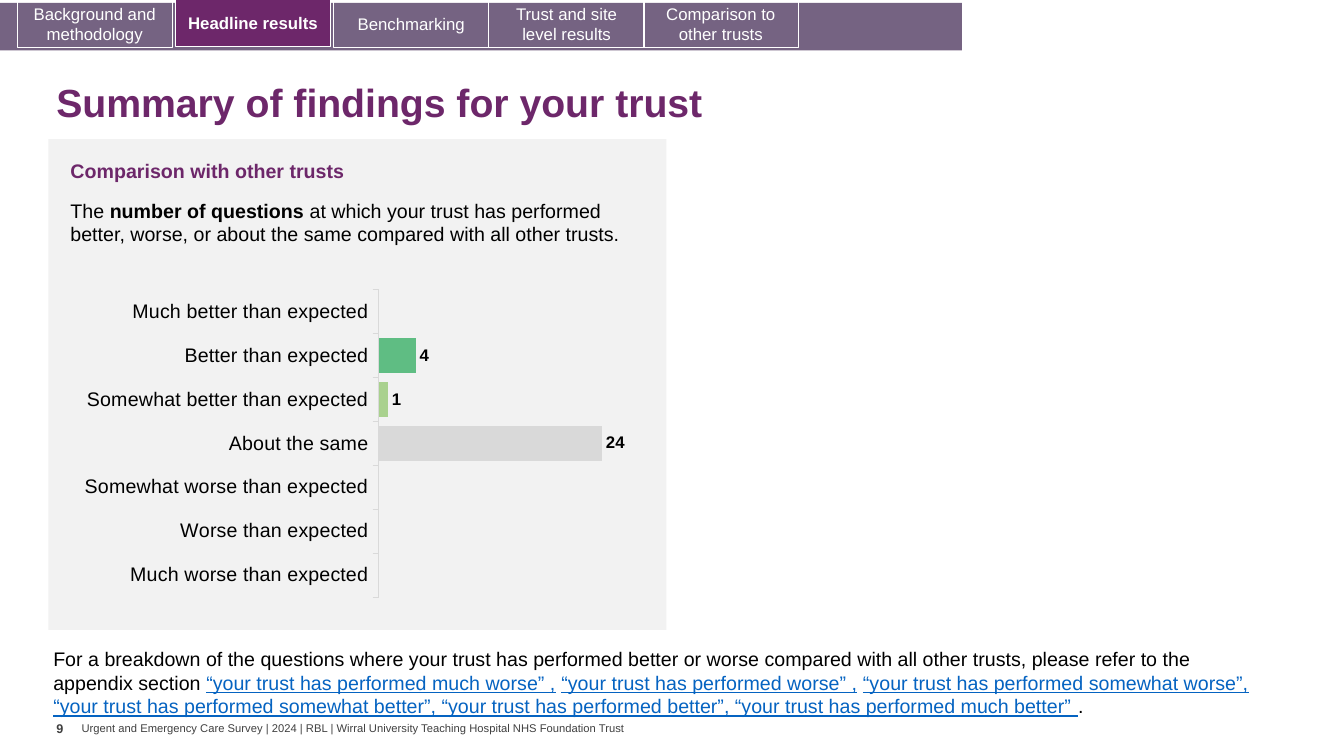
from lxml import etree
from pptx import Presentation
from pptx import util as u
from pptx.chart.data import CategoryChartData
from pptx.dml.color import RGBColor
from pptx.enum import chart as ch, shapes, text
from pptx.oxml.ns import qn

SLIDE_W, SLIDE_H = 13.33, 7.5
FONT = "Arial"
PURPLE = RGBColor(0x6D, 0x27, 0x6A)
NAV_PURPLE = RGBColor(0x75, 0x63, 0x82)
PANEL_GREY = RGBColor(0xF2, 0xF2, 0xF2)
AXIS_GREY = RGBColor(0xD9, 0xD9, 0xD9)
FOOTER_GREY = RGBColor(0x40, 0x40, 0x40)
LINK_BLUE = RGBColor(0x05, 0x63, 0xC1)
BLACK = RGBColor(0, 0, 0)
WHITE = RGBColor(0xFF, 0xFF, 0xFF)

TABS = [  # label, left edge
    ("Background and methodology", 0.17),
    ("Headline results", 1.74),
    ("Benchmarking", 3.31),
    ("Trust and site level results", 4.85),
    ("Comparison to other trusts", 6.38),
]
ACTIVE_TAB = "Headline results"
TAB_W, TAB_H = 1.54, 0.46

RESULTS = [  # category, number of questions, bar colour
    ("Much better than expected", None, RGBColor(0x41, 0x99, 0x99)),
    ("Better than expected", 4, RGBColor(0x5F, 0xBD, 0x83)),
    ("Somewhat better than expected", 1, RGBColor(0xA9, 0xD1, 0x8E)),
    ("About the same", 24, AXIS_GREY),
    ("Somewhat worse than expected", None, RGBColor(0xFF, 0xD9, 0x66)),
    ("Worse than expected", None, RGBColor(0xF1, 0xBE, 0x48)),
    ("Much worse than expected", None, RGBColor(0xE8, 0x77, 0x22)),
]


def inches(*lengths):
    return [u.Inches(length) for length in lengths]


def set_font(font, size, color, bold=False):
    font.name, font.size, font.bold = FONT, u.Pt(size), bold
    font.color.rgb = color


def add_rect(slide, box, fill=None, line=None):
    rect = slide.shapes.add_shape(shapes.MSO_SHAPE.RECTANGLE, *inches(*box))
    rect.shadow.inherit = False
    if fill is None:
        rect.fill.background()
    else:
        rect.fill.solid()
        rect.fill.fore_color.rgb = fill
    if line is None:
        rect.line.fill.background()
    else:
        rect.line.color.rgb = line
        rect.line.width = u.Pt(0.75)
    return rect


def add_text(slide, box, runs, size, color=BLACK, bold=False, wrap=True,
             margins=(0.1, 0.05), anchor=text.MSO_ANCHOR.TOP):
    """Place one paragraph; runs are (words, style), style "", "bold" or "link"."""
    frame = slide.shapes.add_textbox(*inches(*box)).text_frame
    frame.word_wrap = wrap
    frame.vertical_anchor = anchor
    frame.margin_left = frame.margin_right = u.Inches(margins[0])
    frame.margin_top = frame.margin_bottom = u.Inches(margins[1])
    paragraph = frame.paragraphs[0]
    set_font(paragraph.font, size, color, bold)
    for words, style in runs:
        run = paragraph.add_run()
        run.text = words
        if style == "bold":
            run.font.bold = True
        elif style == "link":
            run.font.underline = True
            run.font.color.rgb = LINK_BLUE
    return paragraph


def add_navigation(slide, box):
    left, top, _, _ = box
    add_rect(slide, box, NAV_PURPLE)
    for label, offset in TABS:
        active = label == ACTIVE_TAB
        tab_top = 0 if active else top - 0.02
        tab = add_rect(slide, (left + offset, tab_top, TAB_W, TAB_H),
                       PURPLE if active else None, WHITE)
        frame = tab.text_frame
        frame.word_wrap = True
        frame.vertical_anchor = text.MSO_ANCHOR.MIDDLE
        paragraph = frame.paragraphs[0]
        paragraph.text = label
        paragraph.alignment = text.PP_ALIGN.CENTER
        set_font(paragraph.font, 12, WHITE, active)


def fix_plot_area(chart, x, y, w, h):
    """Set the inner plot area as shares of the chart's size."""
    plot_area = chart.element.find(".//" + qn("c:plotArea"))
    for old in plot_area.findall(qn("c:layout")):
        plot_area.remove(old)
    layout = etree.Element(qn("c:layout"))
    plot_area.insert(0, layout)
    manual = etree.SubElement(layout, qn("c:manualLayout"))
    for tag, value in (("layoutTarget", "inner"), ("xMode", "edge"), ("yMode", "edge"),
                       ("x", x), ("y", y), ("w", w), ("h", h)):
        etree.SubElement(manual, qn("c:" + tag)).set("val", str(value))


def add_results_chart(slide, box):
    data = CategoryChartData(number_format="0")
    data.categories = [category for category, _, _ in RESULTS]
    data.add_series("Series 1", [count for _, count, _ in RESULTS])
    chart = slide.shapes.add_chart(ch.XL_CHART_TYPE.BAR_CLUSTERED, *inches(*box), data).chart
    chart.has_legend = chart.has_title = False
    set_font(chart.font, 14, BLACK)
    fix_plot_area(chart, 0.516, 0.072, 0.468, 0.872)

    # Axes
    categories = chart.category_axis
    categories.reverse_order = True
    categories.major_tick_mark = ch.XL_TICK_MARK.OUTSIDE
    categories.format.line.color.rgb = AXIS_GREY
    categories.format.line.width = u.Pt(0.75)
    set_font(categories.tick_labels.font, 14, BLACK)
    counts = chart.value_axis
    counts.visible = counts.has_major_gridlines = False
    counts.minimum_scale, counts.maximum_scale = 0, 30

    # Bars and their labels
    plot = chart.plots[0]
    plot.gap_width = 27
    plot.vary_by_categories = False
    bars = plot.series[0]
    bars.invert_if_negative = False
    for index, (_, _, color) in enumerate(RESULTS):
        fill = bars.points[index].format.fill
        fill.solid()
        fill.fore_color.rgb = color
    labels = bars.data_labels
    labels.show_value = True
    labels.number_format, labels.number_format_is_linked = "0", False
    labels.position = ch.XL_LABEL_POSITION.OUTSIDE_END
    set_font(labels.font, 12, BLACK, True)


def add_comparison_panel(slide, box):
    left, top, width, height = box
    add_rect(slide, box, PANEL_GREY)
    text_left = left + 0.12
    add_text(slide, (text_left, top + 0.15, 5.79, 0.34),
             [("Comparison with other trusts", "")], 14, PURPLE, True)
    add_text(slide, (text_left, top + 0.54, 5.92, 0.81),
             [("The ", ""), ("number of questions ", "bold"),
              ("at which your trust has performed better, worse, or about the same "
               "compared with all other trusts.", "")], 14)
    add_results_chart(slide, (left + 0.22, top + 1.24, 5.92, 3.5))


def add_appendix_note(slide, box):
    add_text(slide, box, [
        ("For a breakdown of the questions where your trust has performed better or worse "
         "compared with all other trusts, please refer to the appendix section ", ""),
        ("“your trust has performed much worse” ,", "link"), (" ", ""),
        ("“your trust has performed worse” ,", "link"), (" ", ""),
        ("“your trust has performed somewhat worse”, “your trust has performed somewhat "
         "better”, “your trust has performed better”, “your trust has performed much "
         "better” ", "link"), (".", "")], 14)


def add_footer(slide, box):
    left, top, width, height = box
    add_text(slide, (left, top, 0.25, height), [("9", "")], 9, FOOTER_GREY, True,
             wrap=False, margins=(0, 0.05))
    add_text(slide, (left + 0.25, top + 0.06, width - 0.25, 0.13),
             [("Urgent and Emergency Care Survey | 2024 | RBL | "
               "Wirral University Teaching Hospital NHS Foundation Trust", "")],
             8, FOOTER_GREY, wrap=False, margins=(0, 0), anchor=text.MSO_ANCHOR.MIDDLE)


def main():
    deck = Presentation()
    deck.slide_width, deck.slide_height = inches(SLIDE_W, SLIDE_H)
    slide = deck.slides.add_slide(deck.slide_layouts[6])
    add_navigation(slide, (0, 0.03, 9.54, 0.47))
    title = add_text(slide, (0.46, 0.68, 12.49, 0.72),
                     [("Summary of findings for your trust", "")], 28, PURPLE, True,
                     anchor=text.MSO_ANCHOR.MIDDLE)
    title.line_spacing = 0.9
    add_comparison_panel(slide, (0.48, 1.38, 6.13, 4.87))
    add_appendix_note(slide, (0.43, 6.37, 12.21, 0.81))
    add_footer(slide, (0.56, 7.1, 5.72, 0.4))
    deck.save("out.pptx")


if __name__ == "__main__":
    main()
